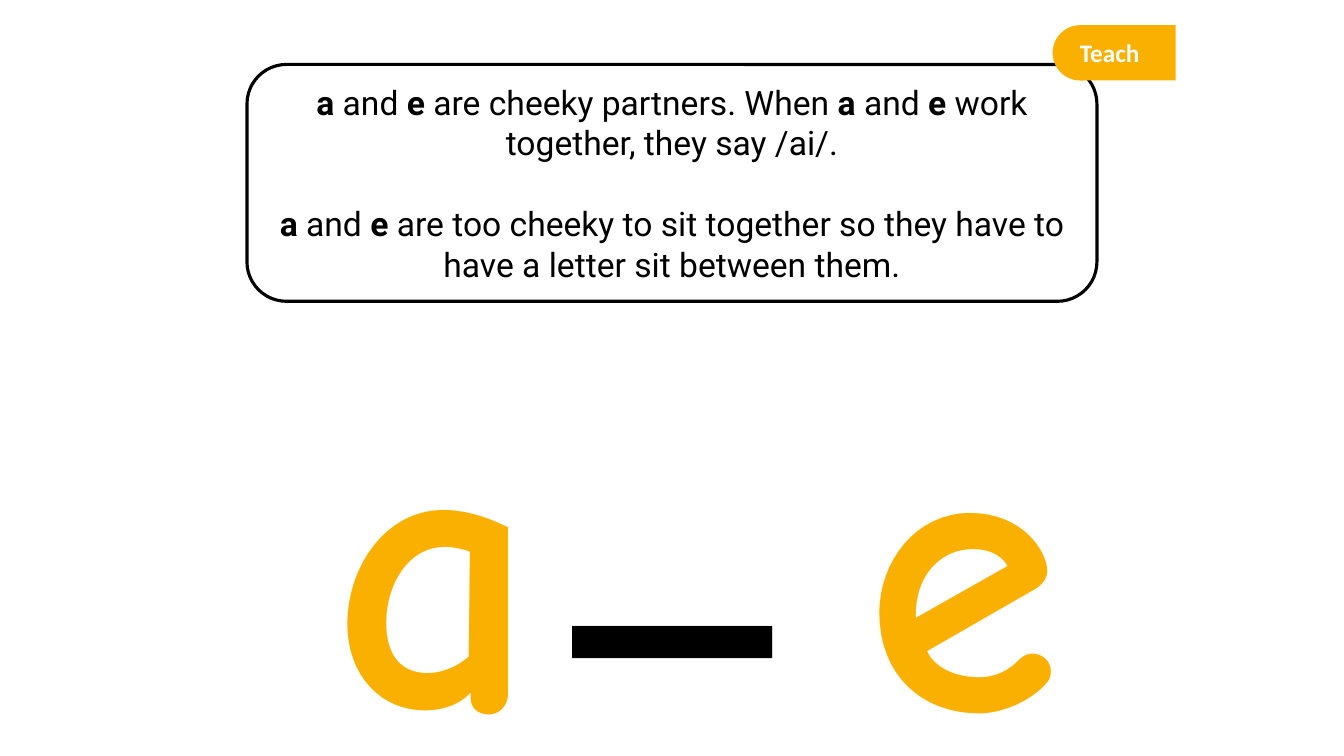
from pptx import Presentation
from pptx.dml.color import RGBColor
from pptx.enum.shapes import MSO_SHAPE
from pptx.enum.text import MSO_ANCHOR, PP_ALIGN
from pptx.util import Inches, Pt

COLORS = {"ink": "000000", "accent": "FAB001", "paper": "FFFFFF"}
WIDTH, HEIGHT = Inches(13.33), Inches(7.5)
RULES = [
    ["a", " and ", "e", " are cheeky partners. When ", "a", " and ", "e",
     " work together, they say /ai/."],
    ["a", " and ", "e",
     " are too cheeky to sit together so they have to have a letter sit between them."],
]
LETTERS = [
    ("a", "Comic Neue", "accent", PP_ALIGN.LEFT, (24.01, 39.87, 18.3, 65.73)),
    ("e", "Comic Neue", "accent", PP_ALIGN.LEFT, (63.62, 40.27, 16.28, 65.73)),
    ("_", "Calibri", "ink", PP_ALIGN.CENTER, (36.16, 25.87, 27.76, 65.73)),
]


def place(left, top, width, height):
    """Turn percentages of the slide into lengths."""
    return [round(share * side / 100) for share, side in
            ((left, WIDTH), (top, HEIGHT), (width, WIDTH), (height, HEIGHT))]


def color(name):
    """Look up a colour of the slide."""
    return RGBColor.from_string(COLORS[name])


def style(p, font, size, ink, align, bold=None):
    """Set the look of a paragraph."""
    p.alignment = align
    p.font.name, p.font.size, p.font.bold = font, Pt(size), bold
    p.font.color.rgb = color(ink)


def add_shape(shapes, kind, box, fill=None):
    """Add a preset shape, filled without a line or left hollow."""
    sp = shapes.add_shape(kind, *place(*box))
    sp.shadow.inherit = False
    if fill:
        sp.fill.solid()
        sp.fill.fore_color.rgb = color(fill)
        sp.line.fill.background()
    else:
        sp.fill.background()
    return sp


def add_rules(s):
    """Add the outlined panel with the spelling rules."""
    sp = add_shape(s.shapes, MSO_SHAPE.ROUNDED_RECTANGLE, (18.38, 8.53, 63.24, 31.33))
    sp.line.color.rgb = color("ink")
    sp.line.width = Pt(2.25)
    tf = sp.text_frame
    tf.word_wrap = True
    tf.vertical_anchor = MSO_ANCHOR.MIDDLE
    for i, rule in enumerate(RULES):
        p = tf.add_paragraph() if i else tf.paragraphs[0]
        style(p, "Roboto", 24, "ink", PP_ALIGN.CENTER)
        if i:
            p.space_before = Pt(29)
        for j, text in enumerate(rule):
            r = p.add_run()
            r.text = text
            r.font.bold = j % 2 == 0


def add_letter(s, text, font, ink, align, box):
    """Add one giant character."""
    tf = s.shapes.add_textbox(*place(*box)).text_frame
    tf.word_wrap = True
    p = tf.paragraphs[0]
    p.text = text
    style(p, font, 287, ink, align, True)


def add_tag(s, text):
    """Add the round-ended corner tag."""
    shapes = s.shapes.add_group_shape().shapes
    add_shape(shapes, MSO_SHAPE.OVAL, (78.32, 3.33, 4.13, 7.33), "accent")
    sp = add_shape(shapes, MSO_SHAPE.RECTANGLE, (80.35, 3.33, 7.13, 7.33), "accent")
    tf = sp.text_frame
    tf.word_wrap = True
    tf.vertical_anchor = MSO_ANCHOR.MIDDLE
    tf.margin_left, tf.margin_right = 0, round(WIDTH * 0.015)
    p = tf.paragraphs[0]
    p.text = text
    style(p, "Calibri", 18, "paper", PP_ALIGN.LEFT, True)


def main():
    """Build the slide and save it."""
    prs = Presentation()
    prs.slide_width, prs.slide_height = WIDTH, HEIGHT
    s = prs.slides.add_slide(prs.slide_layouts[6])
    add_rules(s)
    for letter in LETTERS:
        add_letter(s, *letter)
    add_tag(s, "Teach")
    prs.save("out.pptx")


if __name__ == "__main__":
    main()
